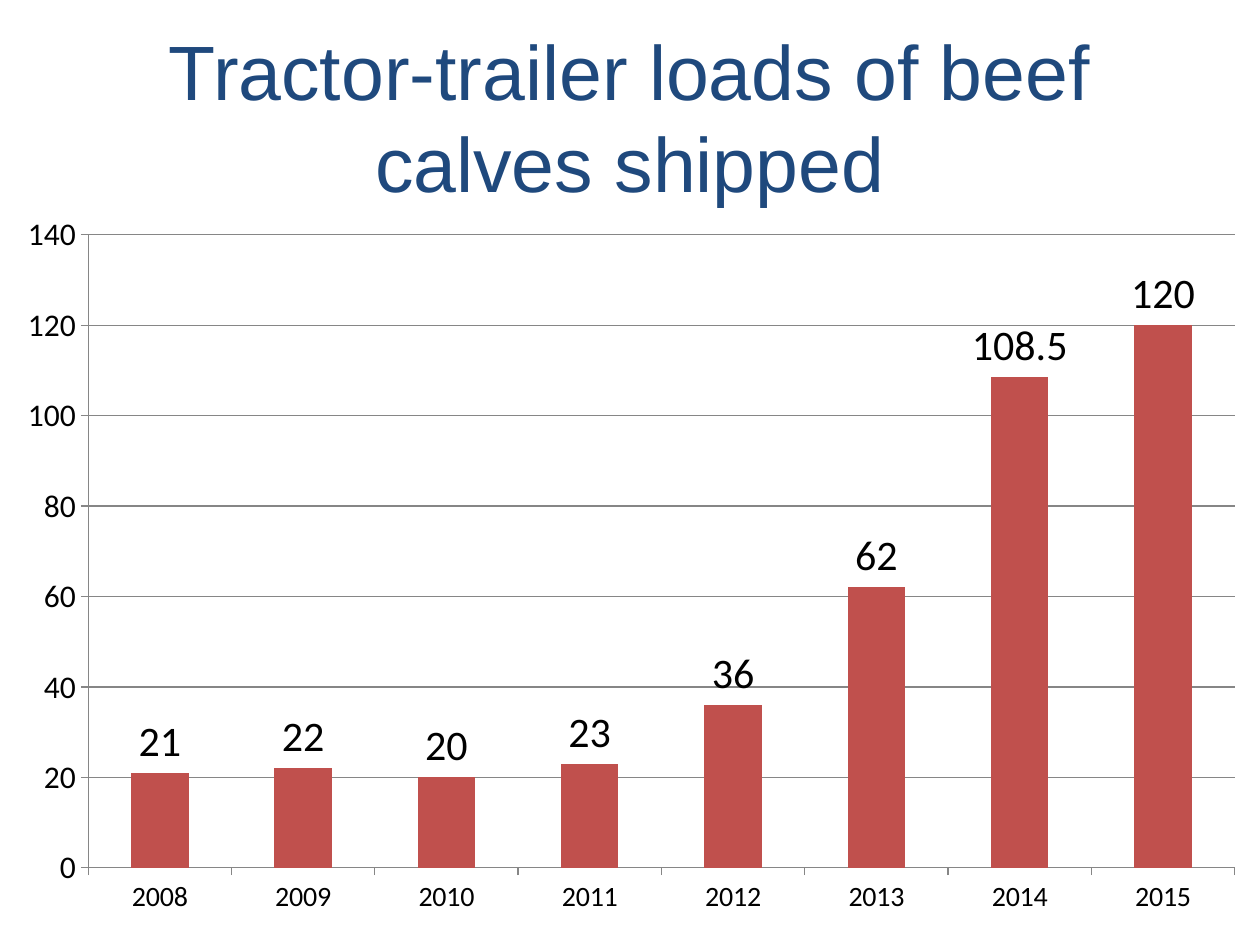
import pptx
import pptx.chart.data
import pptx.dml.color
import pptx.enum.chart
import pptx.enum.text
import pptx.oxml
import pptx.oxml.ns
import pptx.util

WIDTH, HEIGHT = pptx.util.Inches(10), pptx.util.Inches(7.5)
LOADS = {"2008": 21, "2009": 22, "2010": 20, "2011": 23,
         "2012": 36, "2013": 62, "2014": 108.5, "2015": 120}
# Plot area as shares of the chart's size
PLOT_SHARES = {"x": 0.07, "y": 0.05, "w": 0.91, "h": 0.87}


def color(hex_text):
    return pptx.dml.color.RGBColor.from_string(hex_text)


def box(left, top, width, height):
    """Turn shares of the slide into lengths."""
    return (int(left * WIDTH), int(top * HEIGHT),
            int(width * WIDTH), int(height * HEIGHT))


def style_font(font, name, size, hex_text):
    font.name = name
    font.size = pptx.util.Pt(size)
    font.color.rgb = color(hex_text)


def add_title(slide, area, wording):
    heading = slide.shapes.add_textbox(*area).text_frame
    heading.word_wrap = True
    heading.vertical_anchor = pptx.enum.text.MSO_ANCHOR.MIDDLE
    heading.text = wording
    line = heading.paragraphs[0]
    line.alignment = pptx.enum.text.PP_ALIGN.CENTER
    style_font(line.runs[0].font, "Arial", 44, "1F497D")


def set_plot_layout(chart):
    qn = pptx.oxml.ns.qn
    plot_area = chart._chartSpace.chart.plotArea
    for old in plot_area.findall(qn("c:layout")):
        plot_area.remove(old)
    settings = {"layoutTarget": "inner", "xMode": "edge", "yMode": "edge",
                **PLOT_SHARES}
    parts = "".join(f'<c:{tag} val="{value}"/>' for tag, value in settings.items())
    plot_area.insert(0, pptx.oxml.parse_xml(
        f'<c:layout {pptx.oxml.ns.nsdecls("c")}>'
        f"<c:manualLayout>{parts}</c:manualLayout></c:layout>"))


def add_loads_chart(slide, area):
    loads = pptx.chart.data.CategoryChartData()
    loads.categories = list(LOADS)
    loads.add_series("Series 1", list(LOADS.values()))
    chart = slide.shapes.add_chart(
        pptx.enum.chart.XL_CHART_TYPE.COLUMN_CLUSTERED, *area, loads).chart
    chart.has_legend = False
    chart.has_title = False
    style_font(chart.font, "Calibri", 10, "000000")
    set_plot_layout(chart)

    # Axes and gridlines
    years, counts = chart.category_axis, chart.value_axis
    for axis, size in ((years, 16), (counts, 18)):
        style_font(axis.tick_labels.font, "Calibri", size, "000000")
        axis.major_tick_mark = pptx.enum.chart.XL_TICK_MARK.OUTSIDE
        axis.format.line.color.rgb = color("868686")
        axis.format.line.width = pptx.util.Pt(0.75)
    counts.minimum_scale, counts.maximum_scale, counts.major_unit = 0, 140, 20
    counts.has_major_gridlines = True
    counts.major_gridlines.format.line.color.rgb = color("868686")
    counts.major_gridlines.format.line.width = pptx.util.Pt(0.75)

    # Columns and their values
    columns = chart.plots[0]
    columns.gap_width = 150
    columns.vary_by_categories = False
    yearly = columns.series[0]
    yearly.format.fill.solid()
    yearly.format.fill.fore_color.rgb = color("C0504D")
    labels = yearly.data_labels
    labels.show_value = True
    labels.position = pptx.enum.chart.XL_LABEL_POSITION.OUTSIDE_END
    style_font(labels.font, "Calibri", 24, "000000")


def main():
    deck = pptx.Presentation()
    deck.slide_width, deck.slide_height = WIDTH, HEIGHT
    slide = deck.slides.add_slide(deck.slide_layouts[6])
    add_title(slide, box(0.05, 0.04, 0.9, 0.165),
              "Tractor-trailer loads of beef calves shipped")
    add_loads_chart(slide, box(0, 0.21, 1, 0.77))
    deck.save("out.pptx")


if __name__ == "__main__":
    main()
